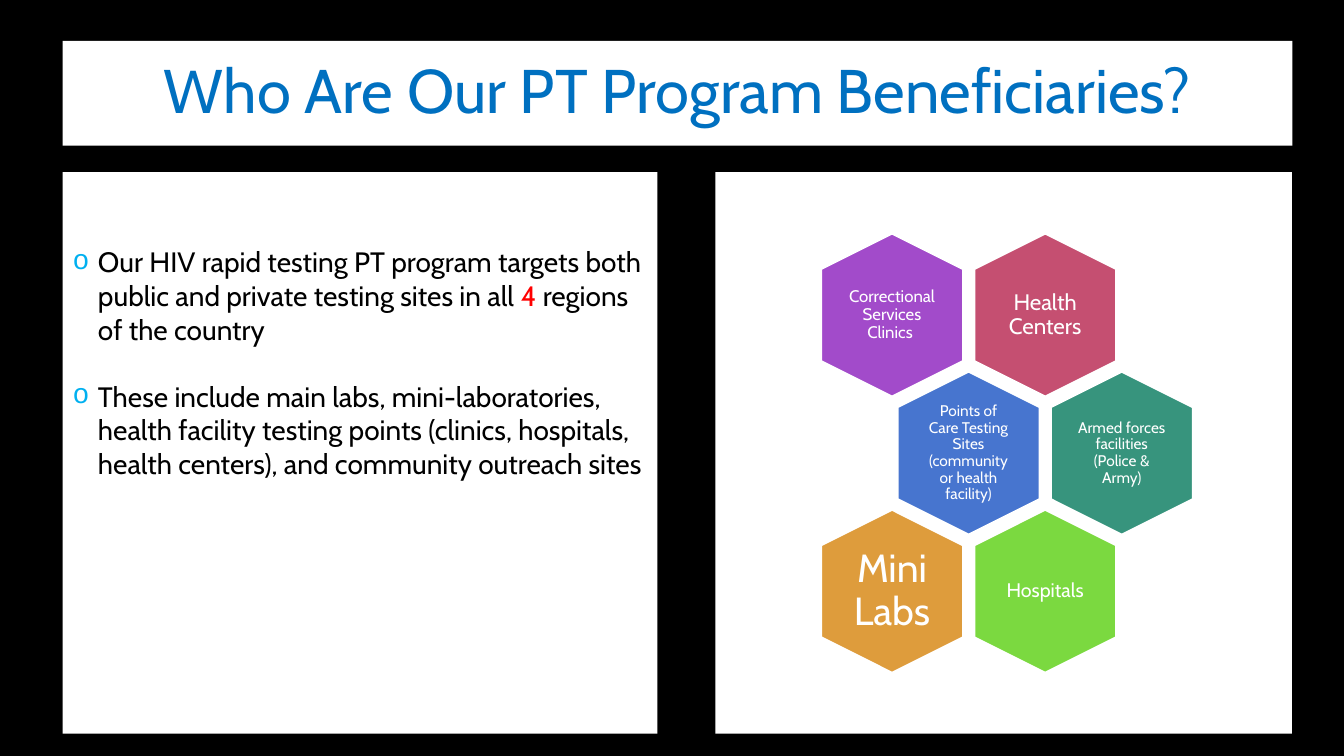
import pptx
import pptx.util
import pptx.dml.color
import pptx.enum.shapes
import pptx.enum.text
from lxml import etree

Cm, Pt = pptx.util.Cm, pptx.util.Pt
Kind = pptx.enum.shapes.MSO_SHAPE
Side = pptx.enum.text.PP_ALIGN
Mid = pptx.enum.text.MSO_ANCHOR.MIDDLE
Top = pptx.enum.text.MSO_ANCHOR.TOP

# Content
TITLE = "Who Are Our PT Program Beneficiaries?"
POINTS = [
    [("Our HIV rapid testing PT program targets both public and private "
      "testing sites in all ", "000000"),
     ("4", "FF0000"),
     (" regions of the country", "000000")],
    [("These include main labs, mini-laboratories, health facility testing "
      "points (clinics, hospitals, health centers), and community outreach "
      "sites", "000000")],
]
# Rows of hexagons: text, size, fill, inset
ROWS = [
    [("Correctional Services Clinics ", 12, "A24BCA", 0),
     ("Health Centers", 16, "C54F71", 0.18)],
    [("Points of Care Testing Sites (community or health facility)",
      11, "4775CF", 0.13),
     ("Armed forces facilities (Police & Army)", 11, "37947D", 0)],
    [("Mini Labs", 28, "DE9C3C", 0),
     ("Hospitals", 14, "7BD940", 0.15)],
]

# Layout in cm
LEFT, WIDE = 1.58, 30.99
HEAD = (LEFT, 1.03, WIDE, 2.64)
BODY = (LEFT, 4.34, 14.99, 14.15)
PANEL = (18.03, 4.34, 14.53, 14.15)
HEX_W, HEX_H = 4.11, 3.58
TEXT_W, TEXT_H = 2.46, 2.82
MID_X, MID_Y = 22.48, 7.94
STEP_X, STEP_Y = 3.86, 3.48


def color(code):
    return pptx.dml.color.RGBColor.from_string(code)


def add_form(kind, box, fill):
    form = slide.shapes.add_shape(kind, *map(Cm, box))
    form.shadow.inherit = False
    form.fill.solid()
    form.fill.fore_color.rgb = color(fill)
    form.line.fill.background()
    return form


def set_frame(frame, anchor, insets):
    frame.word_wrap = True
    frame.vertical_anchor = anchor
    left, top, right, low = map(Cm, insets)
    frame.margin_left, frame.margin_top = left, top
    frame.margin_right, frame.margin_bottom = right, low


def add_run(para, text, size, code):
    run = para.add_run()
    run.text = text
    run.font.name = "Cabin"
    run.font.size = Pt(size)
    run.font.color.rgb = color(code)


def add_line(para, text, size, code):
    para.alignment = Side.CENTER
    para.line_spacing = 0.9
    add_run(para, text, size, code)


def add_bullet(para, code):
    props = para._p.get_or_add_pPr()
    props.set("marL", str(Cm(0.64)))
    props.set("indent", str(-Cm(0.64)))
    space = "{http://schemas.openxmlformats.org/drawingml/2006/main}"
    hue = etree.SubElement(props, space + "buClr")
    etree.SubElement(hue, space + "srgbClr", val=code)
    etree.SubElement(props, space + "buFont", typeface="Courier New")
    etree.SubElement(props, space + "buChar", char="o")


def center(x, y, w, h):
    return x - w / 2, y - h / 2, w, h


deck = pptx.Presentation()
deck.slide_width, deck.slide_height = Cm(33.87), Cm(19.05)
slide = deck.slides.add_slide(deck.slide_layouts[6])
slide.background.fill.solid()
slide.background.fill.fore_color.rgb = color("000000")

# Title bar
head = add_form(Kind.RECTANGLE, HEAD, "FFFFFF").text_frame
set_frame(head, Mid, (0.25, 0.13, 0.25, 0.13))
add_line(head.paragraphs[0], TITLE, 44, "0070C0")

# Bullet panel
body = add_form(Kind.RECTANGLE, BODY, "FFFFFF").text_frame
set_frame(body, Top, (0.25, 1.83, 0.25, 0.13))
for i, point in enumerate(POINTS):
    para = body.add_paragraph() if i else body.paragraphs[0]
    para.alignment = Side.LEFT
    if i:
        para.space_before = Pt(24)
    add_bullet(para, "00B0F0")
    for text, code in point:
        add_run(para, text, 20, code)

# Honeycomb: every second row shifts by half a step
add_form(Kind.RECTANGLE, PANEL, "FFFFFF")
for i, row in enumerate(ROWS):
    for j, (text, size, fill, inset) in enumerate(row):
        x = MID_X + (j + i % 2 / 2) * STEP_X
        y = MID_Y + i * STEP_Y
        cell = add_form(Kind.HEXAGON, center(x, y, HEX_W, HEX_H), fill)
        cell.rotation = 90
        cell.adjustments[0] = 0.25
        cell.line.color.rgb = color("FFFFFF")
        cell.line.width = Pt(1.5)
        label = slide.shapes.add_textbox(
            *map(Cm, center(x, y, TEXT_W, TEXT_H))).text_frame
        set_frame(label, Mid, [inset] * 4)
        add_line(label.paragraphs[0], text, size, "FFFFFF")

deck.save("out.pptx")
